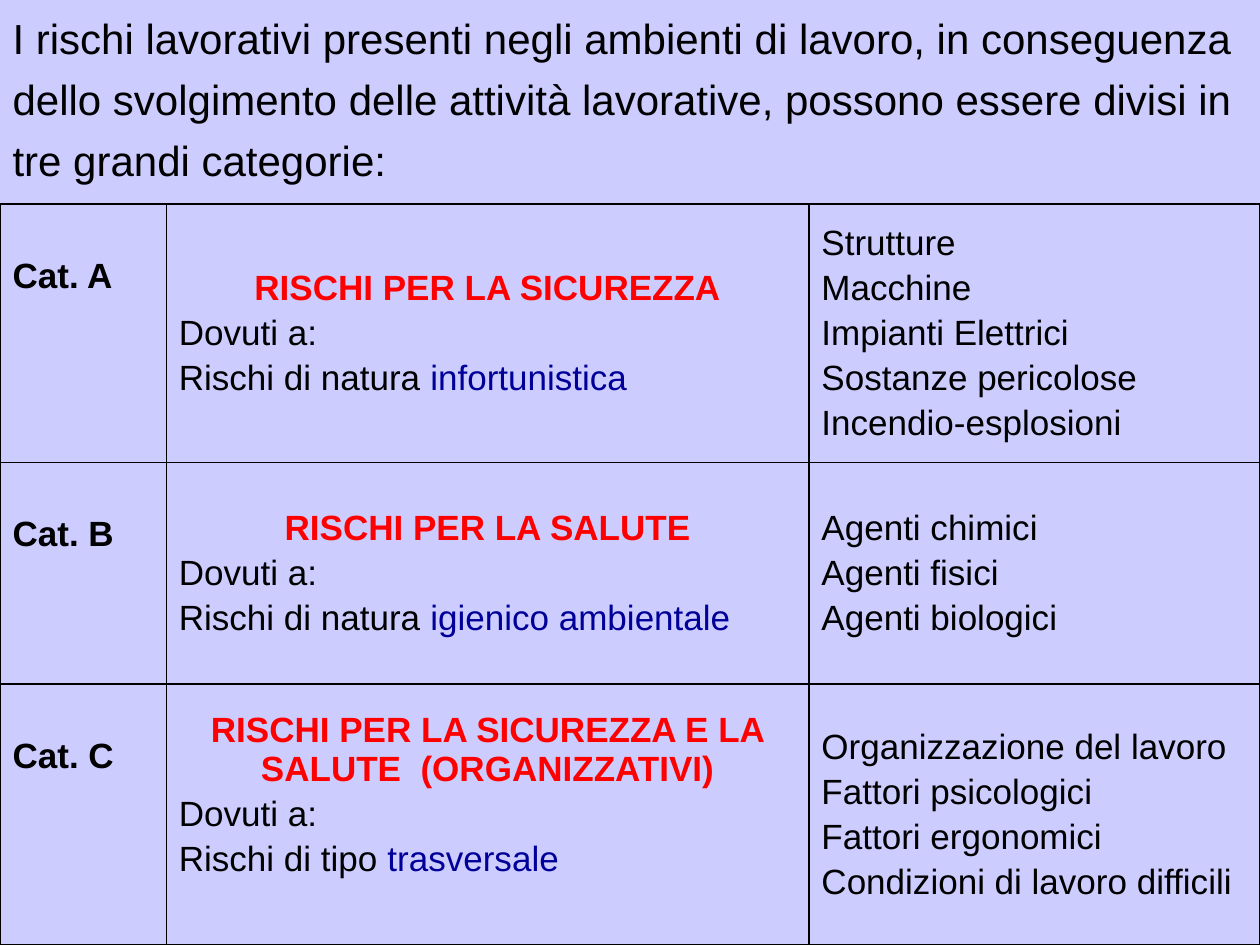
from dataclasses import dataclass

from lxml.etree import SubElement
from pptx import Presentation
from pptx.dml.color import RGBColor
from pptx.enum.text import MSO_ANCHOR, MSO_AUTO_SIZE, PP_ALIGN
from pptx.oxml.ns import qn
from pptx.util import Inches, Pt


@dataclass(frozen=True)
class Theme:
    font: str = "Arial"
    lead: float = 24
    text: float = 20
    wide: float = 6
    gap: float = 3.4
    back: str = "CCCCFF"
    ink: str = "000000"
    head: str = "FF0000"
    mark: str = "000099"


THEME = Theme()
COLS = [1.32, 5.1, 3.58]
ROWS = [2.05, 1.76, 2.07]
TOP = 1.62
LEAD = [
    "I rischi lavorativi presenti negli ambienti di lavoro, in conseguenza",
    "dello svolgimento delle attività lavorative, possono essere divisi in",
    "tre grandi categorie:",
]
RISKS = [
    ("Cat. A", "RISCHI PER LA SICUREZZA", "Rischi di natura ", "infortunistica",
     ["Strutture", "Macchine", "Impianti Elettrici", "Sostanze pericolose",
      "Incendio-esplosioni"], 0.05),
    ("Cat. B", "RISCHI PER LA SALUTE", "Rischi di natura ", "igienico ambientale",
     ["Agenti chimici", "Agenti fisici", "Agenti biologici"], 0.05),
    ("Cat. C", "RISCHI PER LA SICUREZZA E LA SALUTE  (ORGANIZZATIVI)",
     "Rischi di tipo ", "trasversale",
     ["Organizzazione del lavoro", "Fattori psicologici", "Fattori ergonomici",
      "Condizioni di lavoro difficili"], 0.36),
]


def paint(item, color):
    item.fill.solid()
    item.fill.fore_color.rgb = RGBColor.from_string(color)


def add_run(para, text, size, color=THEME.ink, bold=False):
    run = para.add_run()
    run.text = text
    font = run.font
    font.name, font.size, font.bold = THEME.font, Pt(size), bold
    font.color.rgb = RGBColor.from_string(color)


def add_para(frame, first, gap):
    para = frame.paragraphs[0] if first else frame.add_paragraph()
    para.space_before = Pt(0 if first else gap)
    return para


def add_lines(frame, lines, size, gap):
    for i, line in enumerate(lines):
        add_run(add_para(frame, i == 0, gap), line, size)


def add_lead(slide):
    slide.shapes.title.element.getparent().remove(slide.shapes.title.element)
    body = slide.placeholders[1]
    body.left, body.top, body.width, body.height = 0, 0, Inches(10), Inches(7.22)
    paint(body, THEME.back)
    frame = body.text_frame
    frame.auto_size = MSO_AUTO_SIZE.NONE
    frame.vertical_anchor = MSO_ANCHOR.TOP
    frame.margin_top = Inches(0.1)
    add_lines(frame, LEAD, THEME.lead, THEME.wide)
    for para in frame.paragraphs:
        SubElement(para._p.get_or_add_pPr(), qn("a:buNone"))


def add_edges(cell):
    props = cell._tc.get_or_add_tcPr()
    for side in ("lnL", "lnR", "lnT", "lnB"):
        line = SubElement(props, qn("a:" + side), w=str(Pt(1)))
        fill = SubElement(line, qn("a:solidFill"))
        SubElement(fill, qn("a:srgbClr"), val=THEME.ink)


def fill_row(cells, risk):
    name, head, lead, mark, items, base = risk
    for cell in cells:
        add_edges(cell)
        paint(cell, THEME.back)
        cell.vertical_anchor = MSO_ANCHOR.MIDDLE
    label, cause, source = cells

    label.vertical_anchor = MSO_ANCHOR.TOP
    label.margin_top = Inches(0.42)
    add_run(label.text_frame.paragraphs[0], name, THEME.text, bold=True)

    cause.margin_bottom = Inches(base)
    frame = cause.text_frame
    para = add_para(frame, True, THEME.gap)
    para.alignment = PP_ALIGN.CENTER
    add_run(para, head, THEME.text, THEME.head, True)
    add_run(add_para(frame, False, THEME.gap), "Dovuti a:", THEME.text)
    para = add_para(frame, False, THEME.gap)
    add_run(para, lead, THEME.text)
    add_run(para, mark, THEME.text, THEME.mark)

    add_lines(source.text_frame, items, THEME.text, THEME.gap)


def add_grid(slide):
    frame = slide.shapes.add_table(len(ROWS), len(COLS), 0, Inches(TOP),
                                   Inches(sum(COLS)), Inches(sum(ROWS)))
    table = frame.table
    table.first_row = table.horz_banding = False
    for col, width in zip(table.columns, COLS):
        col.width = Inches(width)
    for row, height, risk in zip(table.rows, ROWS, RISKS):
        row.height = Inches(height)
        fill_row(list(row.cells), risk)


def main():
    deck = Presentation()
    deck.slide_width, deck.slide_height = Inches(10), Inches(7.5)
    slide = deck.slides.add_slide(deck.slide_layouts[1])
    add_lead(slide)
    add_grid(slide)
    deck.save("out.pptx")


if __name__ == "__main__":
    main()
